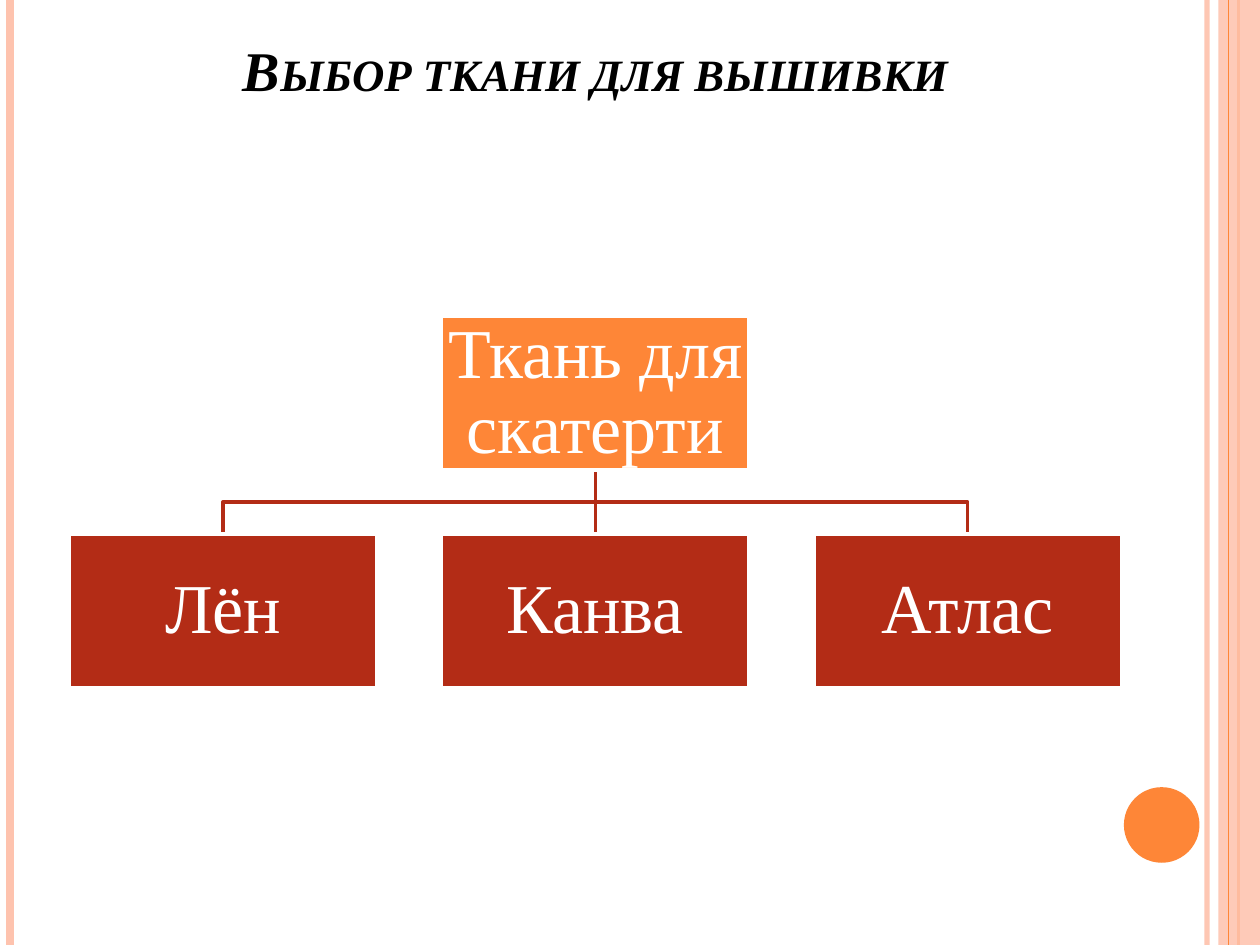
from lxml import etree
from pptx import Presentation
from pptx import util as u
from pptx.dml.color import RGBColor
from pptx.enum import shapes, text
from pptx.oxml.ns import qn

COLORS = {"orange": "FE8637", "peach": "FEC3AE", "red": "B32C16",
          "white": "FFFFFF", "black": "000000"}
FONT = "Times New Roman"
WIDTH, HEIGHT = 10, 7.5
LEFT, TOP = 0.55, 2.51
COL, ROW = 2.955, 1.73
BOX_W, BOX_H = 2.44, 1.22


class Deck:
    def __init__(self):
        self.prs = Presentation()
        self.prs.slide_width = u.Inches(WIDTH)
        self.prs.slide_height = u.Inches(HEIGHT)
        self.s = self.prs.slides.add_slide(self.prs.slide_layouts[5])

    def share(self, *values):
        return [u.Inches(v * (HEIGHT if i % 2 else WIDTH))
                for i, v in enumerate(values)]

    def color(self, fmt, name, alpha=100):
        fmt.solid()
        fmt.fore_color.rgb = RGBColor.from_string(COLORS[name])
        if alpha < 100:
            clr = fmt._xPr.find(qn("a:solidFill"))[0]
            etree.SubElement(clr, qn("a:alpha")).set("val", str(alpha * 1000))

    def stroke(self, sp, name, width, alpha=100):
        self.color(sp.line.fill, name, alpha)
        sp.line.width = u.Pt(width)

    def format_text(self, tf, size, name, **style):
        p = tf.paragraphs[0]
        p.alignment = text.PP_ALIGN.CENTER
        f = p.runs[0].font
        f.name, f.size = FONT, u.Pt(size)
        f.color.rgb = RGBColor.from_string(COLORS[name])
        for key, value in style.items():
            setattr(f, key, value)
        return p

    def title(self, words, *area):
        sp = self.s.shapes.title
        sp.left, sp.top, sp.width, sp.height = self.share(*area)
        tf = sp.text_frame
        tf.text = words
        tf.vertical_anchor = text.MSO_ANCHOR.BOTTOM
        tf.auto_size = text.MSO_AUTO_SIZE.NONE
        p = self.format_text(tf, 32, "black", bold=True, italic=True)
        p.runs[0].font._element.set("cap", "small")

    def shape(self, kind, name, area, alpha=100):
        sp = self.s.shapes.add_shape(kind, *area)
        sp.shadow.inherit = False
        self.color(sp.fill, name, alpha)
        sp.line.fill.background()
        return sp

    def line(self, ends, name, width, alpha=100):
        sp = self.s.shapes.add_connector(shapes.MSO_CONNECTOR.STRAIGHT, *ends)
        self.stroke(sp, name, width, alpha)
        etree.SubElement(sp._element.spPr, qn("a:effectLst"))
        return sp

    def stripe(self, x, name, width, alpha=100):
        self.line(self.share(x, 0, x, 1), name, width, alpha)

    def box(self, words, col, row, name):
        area = [u.Inches(v) for v in
                (LEFT + col * COL, TOP + row * ROW, BOX_W, BOX_H)]
        sp = self.shape(shapes.MSO_SHAPE.RECTANGLE, name, area)
        self.stroke(sp, "white", 2)
        tf = sp.text_frame
        tf.text = words
        tf.word_wrap = True
        tf.vertical_anchor = text.MSO_ANCHOR.MIDDLE
        tf.margin_left = tf.margin_right = u.Inches(0.03)
        tf.margin_top = tf.margin_bottom = u.Inches(0.03)
        self.format_text(tf, 40, "white").line_spacing = 0.9
        return sp

    def branch(self, parent, child):
        x1, y1 = parent.left + parent.width // 2, parent.top + parent.height
        x2, y2 = child.left + child.width // 2, child.top
        if x1 == x2:
            sp = self.line((x1, y1, x2, y2), "red", 2)
            sp.begin_connect(parent, 2)
            sp.end_connect(child, 0)
        else:
            mid = (y1 + y2) // 2
            fb = self.s.shapes.build_freeform(x1, y1)
            fb.add_line_segments([(x1, mid), (x2, mid), (x2, y2)], close=False)
            sp = fb.convert_to_shape()
            sp.shadow.inherit = False
            sp.fill.background()
            self.stroke(sp, "red", 2)
        parent._element.addprevious(sp._element)


def main():
    d = Deck()
    d.stripe(0.958, "peach", 3, 93)
    d.stripe(0.008, "peach", 4.5)
    d.stripe(0.983, "orange", 1.5)
    d.shape(shapes.MSO_SHAPE.RECTANGLE, "peach",
            d.share(0.967, 0, 0.033, 1), 87)
    d.stripe(0.975, "orange", 0.75)
    d.shape(shapes.MSO_SHAPE.OVAL, "orange",
            d.share(0.892, 0.833, 0.06, 0.08))
    d.title("Выбор ткани для вышивки", 0.078, 0.04, 0.789, 0.075)

    root = d.box("Ткань для скатерти", 1, 0, "orange")
    for col, fabric in enumerate(("Лён", "Канва", "Атлас")):
        d.branch(root, d.box(fabric, col, 1, "red"))
    d.prs.save("out.pptx")


if __name__ == "__main__":
    main()
